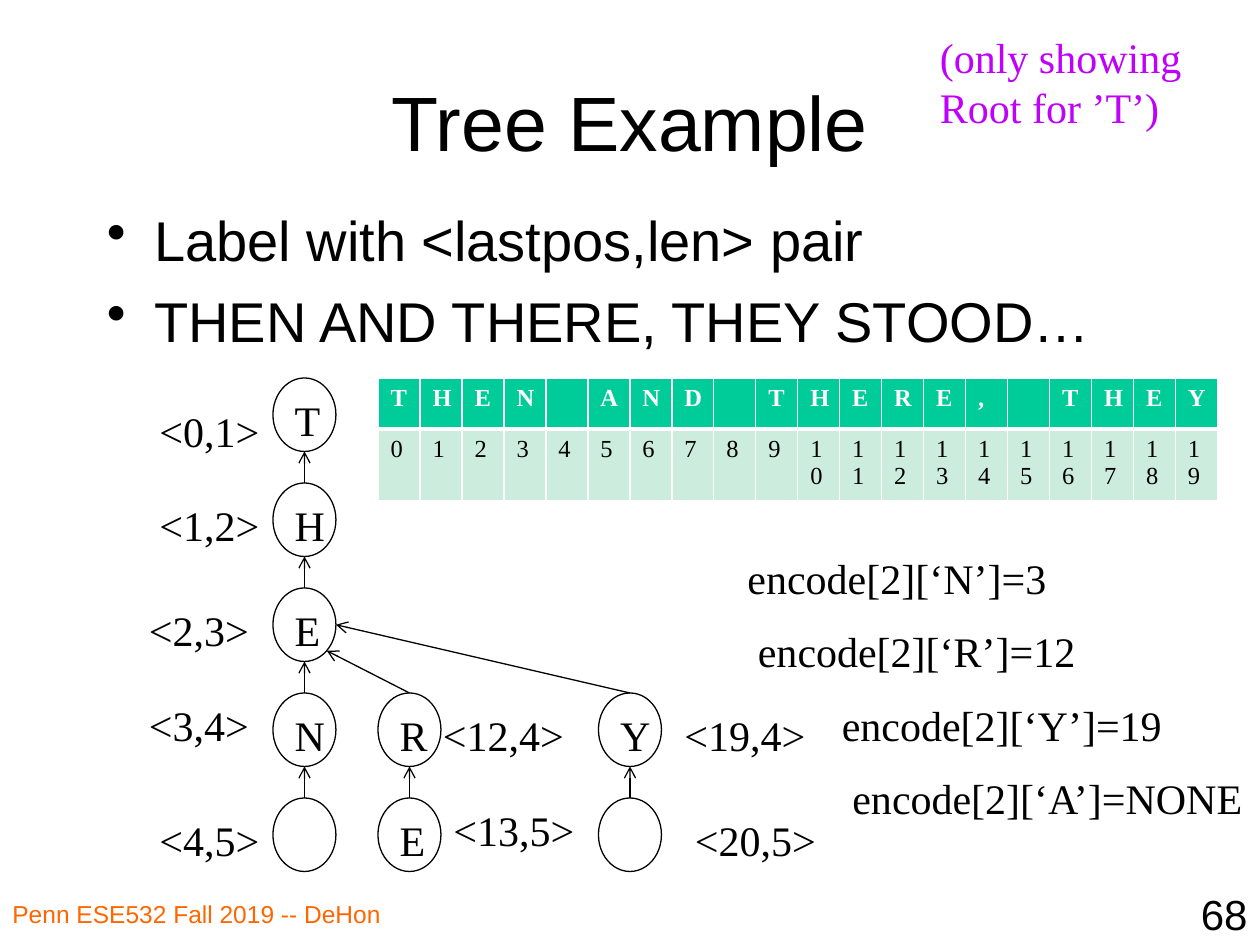
from math import cos, radians, sin

from lxml.etree import SubElement
from pptx import Presentation
from pptx.dml.color import RGBColor
from pptx.enum.shapes import MSO_CONNECTOR, MSO_SHAPE
from pptx.enum.text import MSO_ANCHOR, MSO_AUTO_SIZE, PP_ALIGN
from pptx.oxml.ns import qn
from pptx.util import Pt

BLACK = RGBColor(0x00, 0x00, 0x00)
WHITE = RGBColor(0xFF, 0xFF, 0xFF)
ORANGE = RGBColor(0xFF, 0x66, 0x00)
PURPLE = RGBColor(0xBF, 0x00, 0xFA)
GREEN = RGBColor(0x00, 0xCC, 0x99)
PALE_GREEN = RGBColor(0xCC, 0xEC, 0xDE)
SANS, SERIF = "Arial", "Times New Roman"
NODE_WIDTH, NODE_HEIGHT = 36, 42
LEVEL_STEP = 60
SENTENCE = "THEN AND THERE, THEY"

# key: letter, column offset, level, parent key, angle at which the edge meets the parent
NODES = {
    "T": ("T", 78, 0, None, 90),
    "TH": ("H", 78, 1, "T", 90),
    "THE": ("E", 78, 2, "TH", 90),
    "THEN": ("N", 78, 3, "THE", 90),
    "THEN ": ("", 78, 4, "THEN", 90),
    "THER": ("R", 138, 3, "THE", 45),
    "THERE": ("E", 138, 4, "THER", 90),
    "THEY": ("Y", 264, 3, "THE", 0),
    "THEY ": ("", 264, 4, "THEY", 90),
}
LABELS = [
    ("<0,1>", 6, 12, 73.5),
    ("<1,2>", 6, 66, 73.5),
    ("<2,3>", 0, 126, 73.5),
    ("<3,4>", 0, 180, 73.5),
    ("<4,5>", 6, 246, 73.5),
    ("<12,4>", 168, 186, 85),
    ("<13,5>", 174, 240, 85),
    ("<19,4>", 306, 186, 85),
    ("<20,5>", 312, 246, 85),
]
ENCODINGS = [
    ("encode[2][‘N’]=3", 0, 187),
    ("encode[2][‘R’]=12", 6, 198),
    ("encode[2][‘Y’]=19", 54, 199.5),
    ("encode[2][‘A’]=NONE", 60, 240),
]


def style(para, size, face, color, bold=False):
    """Set the font of a whole paragraph."""
    para.font.size = Pt(size)
    para.font.name = face
    para.font.bold = bold
    para.font.color.rgb = color


def add_text(page, box, lines, size, face, color, align=PP_ALIGN.LEFT, wrap=True):
    """Place a text box with one paragraph per line and return its frame."""
    frame = page.shapes.add_textbox(*map(Pt, box)).text_frame
    frame.word_wrap = wrap
    if not wrap:
        frame.auto_size = MSO_AUTO_SIZE.SHAPE_TO_FIT_TEXT
    frame.text = "\n".join(lines)
    for para in frame.paragraphs:
        para.alignment = align
        style(para, size, face, color)
    return frame


def add_title(page, box):
    """Place the centred title."""
    frame = add_text(page, box, ["Tree Example"], 44, SANS, BLACK, PP_ALIGN.CENTER)
    frame.vertical_anchor = MSO_ANCHOR.MIDDLE


def add_bullets(page, box):
    """Place the bulleted body text."""
    lines = ["Label with <lastpos,len> pair", "THEN AND THERE, THEY STOOD…"]
    for para in add_text(page, box, lines, 32, SANS, BLACK).paragraphs:
        para.space_before = Pt(7.7)
        properties = para._p.get_or_add_pPr()
        properties.set("marL", str(Pt(27)))
        properties.set("indent", str(-Pt(27)))
        bullet = properties.makeelement(qn("a:buChar"), {"char": "•"})
        properties.find(qn("a:defRPr")).addprevious(bullet)


def add_footer(page, box):
    """Place the course name at the left and the page number at the right."""
    left, top, width, height = box
    add_text(page, (left, top + 6, 276, height - 6),
             ["Penn ESE532 Fall 2019 -- DeHon"], 14, SANS, ORANGE)
    add_text(page, (left + width - 150, top, 150, height),
             ["68"], 24, SANS, BLACK, PP_ALIGN.RIGHT)


def add_node(page, left, top, letter):
    """Place one oval tree node."""
    oval = page.shapes.add_shape(MSO_SHAPE.OVAL, Pt(left), Pt(top),
                                 Pt(NODE_WIDTH), Pt(NODE_HEIGHT))
    oval.shadow.inherit = False
    oval.fill.solid()
    oval.fill.fore_color.rgb = WHITE
    oval.line.color.rgb = BLACK
    oval.line.width = Pt(0.75)
    frame = oval.text_frame
    frame.vertical_anchor = MSO_ANCHOR.TOP
    frame.text = letter
    frame.paragraphs[0].alignment = PP_ALIGN.LEFT
    style(frame.paragraphs[0], 24, SERIF, BLACK)


def add_edge(page, start, end):
    """Draw an arrow from a child to its parent."""
    edge = page.shapes.add_connector(MSO_CONNECTOR.STRAIGHT, *map(Pt, start + end))
    edge.line.color.rgb = BLACK
    edge.line.width = Pt(0.75)
    SubElement(edge.line._get_or_add_ln(), qn("a:tailEnd"), type="arrow")
    SubElement(edge._element.spPr, qn("a:effectLst"))


def add_tree(page, box):
    """Place the nodes, edges and position labels of the tree."""
    left, top = box[:2]
    centers = {
        key: (left + column + NODE_WIDTH / 2, top + level * LEVEL_STEP + NODE_HEIGHT / 2)
        for key, (_, column, level, _, _) in NODES.items()
    }
    for key, (letter, column, level, _, _) in NODES.items():
        add_node(page, left + column, top + level * LEVEL_STEP, letter)
    for key, (_, _, _, parent, angle) in NODES.items():
        if parent:
            x, y = centers[key]
            parent_x, parent_y = centers[parent]
            end = (parent_x + NODE_WIDTH / 2 * cos(radians(angle)),
                   parent_y + NODE_HEIGHT / 2 * sin(radians(angle)))
            add_edge(page, (x, y - NODE_HEIGHT / 2), end)
    for label, x, y, width in LABELS:
        add_text(page, (left + x, top + y, width, 36), [label], 24, SERIF, BLACK, wrap=False)


def set_borders(cell, bottom):
    """Give a cell white borders, with its own bottom width."""
    properties = cell._tc.get_or_add_tcPr()
    for index, (side, width) in enumerate(zip("LRTB", (1, 1, 1, bottom))):
        line = properties.makeelement(qn(f"a:ln{side}"), {"w": str(Pt(width))})
        fill = SubElement(line, qn("a:solidFill"))
        SubElement(fill, qn("a:srgbClr"), val=str(WHITE))
        properties.insert(index, line)


def add_positions(page, box):
    """Place the table of letters and their positions."""
    table = page.shapes.add_table(2, len(SENTENCE), *map(Pt, box)).table
    for column in table.columns:
        column.width = Pt(box[2] / len(SENTENCE))
    table.rows[0].height = Pt(29.2)
    table.rows[1].height = Pt(box[3] - 29.2)
    for position, letter in enumerate(SENTENCE):
        rows = [(letter.strip(), GREEN, WHITE, True, 3),
                (str(position), PALE_GREEN, BLACK, False, 1)]
        for row, (text, fill, color, bold, bottom) in enumerate(rows):
            cell = table.cell(row, position)
            cell.text = text
            cell.fill.solid()
            cell.fill.fore_color.rgb = fill
            style(cell.text_frame.paragraphs[0], 14, SERIF, color, bold)
            set_borders(cell, bottom)


def add_encodings(page, box):
    """Place the encode entries at an even vertical step."""
    left, top, _, height = box
    step = height / len(ENCODINGS)
    for index, (text, x, width) in enumerate(ENCODINGS):
        add_text(page, (left + x, top + index * step, width, 36),
                 [text], 24, SERIF, BLACK, wrap=False)


def main():
    """Build the slide and save it."""
    deck = Presentation()
    deck.slide_width, deck.slide_height = Pt(720), Pt(540)
    page = deck.slides.add_slide(deck.slide_layouts[6])
    add_title(page, (54, 24, 612, 90))
    add_bullets(page, (54, 114, 612, 96))
    add_footer(page, (0, 504, 720, 36))
    add_tree(page, (78, 216, 397, 282))
    add_positions(page, (216, 216, 480, 69.8))
    add_encodings(page, (420, 312, 300, 168))
    add_text(page, (530, 14.4, 154, 65.5), ["(only showing", "Root for ’T’)"],
             24, SERIF, PURPLE, wrap=False)
    deck.save("out.pptx")


if __name__ == "__main__":
    main()
